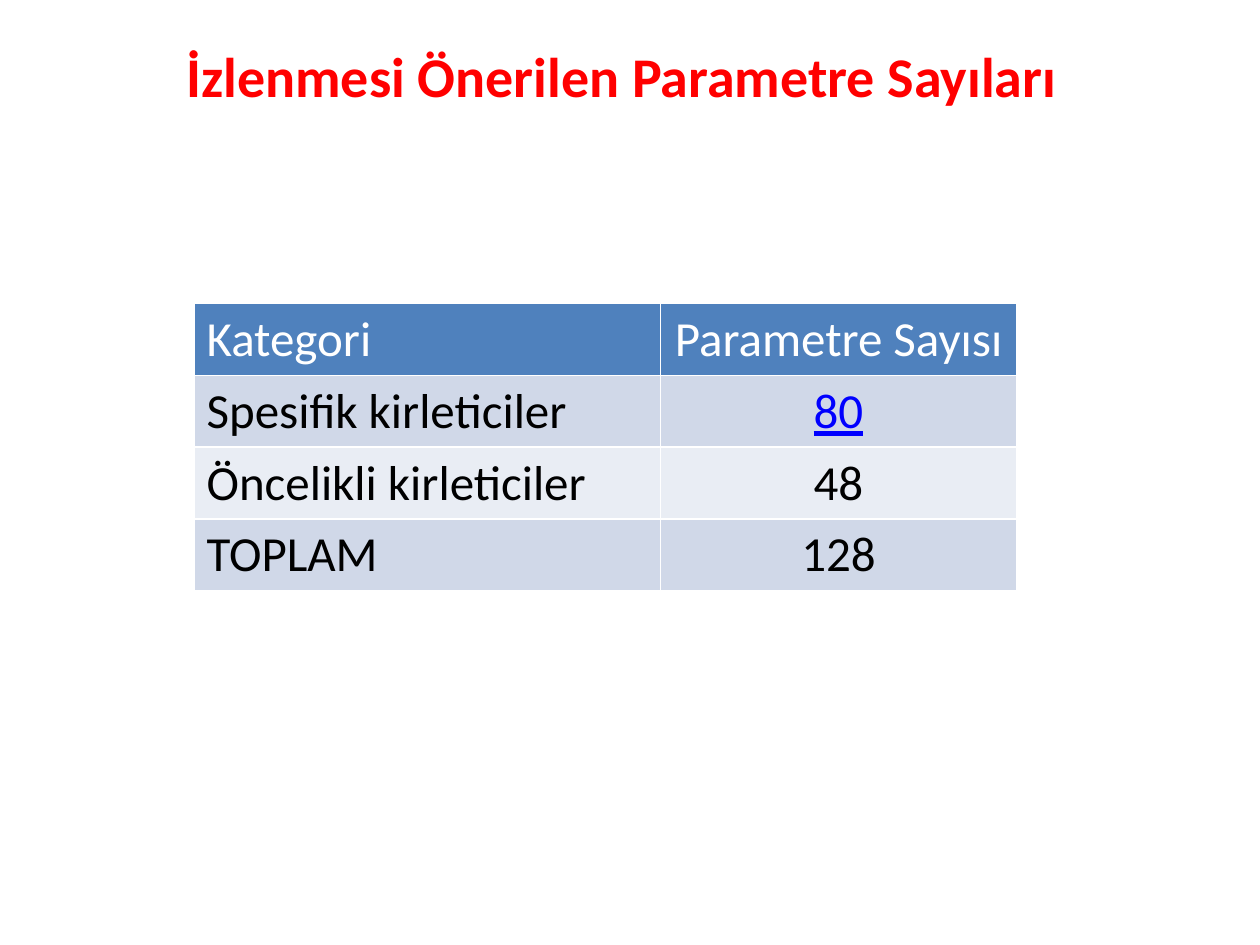
from pptx import Presentation
from pptx.dml.color import RGBColor
from pptx.enum.text import MSO_ANCHOR, PP_ALIGN
from pptx.util import Inches, Pt

FONT = "Calibri"
COLORS = {
    "title": "FF0000",
    "header": "4F81BD",
    "header_text": "FFFFFF",
    "band_dark": "D0D8E8",
    "band_light": "E9EDF4",
    "text": "000000",
    "link": "0000FF",
}
PARAMETER_COUNTS = [
    ("Kategori", "Parametre Sayısı"),
    ("Spesifik kirleticiler", "80"),
    ("Öncelikli kirleticiler", "48"),
    ("TOPLAM", "128"),
]
COLUMN_WIDTHS = [3.7, 2.83]
ROW_HEIGHT = 0.57
UNDERLINED_CELL = (1, 1)


def rgb(name):
    return RGBColor.from_string(COLORS[name])


def add_text(paragraph, text, size, color, bold=False, underline=False):
    run = paragraph.add_run()
    run.text = text
    run.font.name = FONT
    run.font.size = Pt(size)
    run.font.bold = bold
    run.font.underline = underline
    run.font.color.rgb = rgb(color)


def add_title(slide, text):
    title = slide.shapes.add_textbox(Inches(1.38), Inches(0.13), Inches(9), Inches(0.94))
    frame = title.text_frame
    frame.word_wrap = True
    frame.vertical_anchor = MSO_ANCHOR.MIDDLE
    add_text(frame.paragraphs[0], text, 32, "title", bold=True)


def fill_cell(cell, text, row, column):
    if row == 0:
        fill, color = "header", "header_text"
    else:
        fill, color = ("band_dark" if row % 2 else "band_light"), "text"
    underlined = (row, column) == UNDERLINED_CELL
    cell.fill.solid()
    cell.fill.fore_color.rgb = rgb(fill)
    paragraph = cell.text_frame.paragraphs[0]
    paragraph.alignment = PP_ALIGN.CENTER if column else PP_ALIGN.LEFT
    add_text(paragraph, text, 28, "link" if underlined else color, underline=underlined)


def add_count_table(slide, rows):
    # The default table style supplies the white cell borders
    counts = slide.shapes.add_table(
        len(rows), len(COLUMN_WIDTHS), Inches(1.54), Inches(2.41),
        Inches(sum(COLUMN_WIDTHS)), Inches(ROW_HEIGHT * len(rows))).table
    for column, width in zip(counts.columns, COLUMN_WIDTHS):
        column.width = Inches(width)
    for r, values in enumerate(rows):
        counts.rows[r].height = Inches(ROW_HEIGHT)
        for c, value in enumerate(values):
            fill_cell(counts.cell(r, c), value, r, c)


def main():
    presentation = Presentation()
    presentation.slide_width = Inches(10)
    presentation.slide_height = Inches(7.5)
    slide = presentation.slides.add_slide(presentation.slide_layouts[6])

    # Heading
    add_title(slide, "İzlenmesi Önerilen Parametre Sayıları")

    # Parameter counts by category
    add_count_table(slide, PARAMETER_COUNTS)

    presentation.save("out.pptx")


if __name__ == "__main__":
    main()
